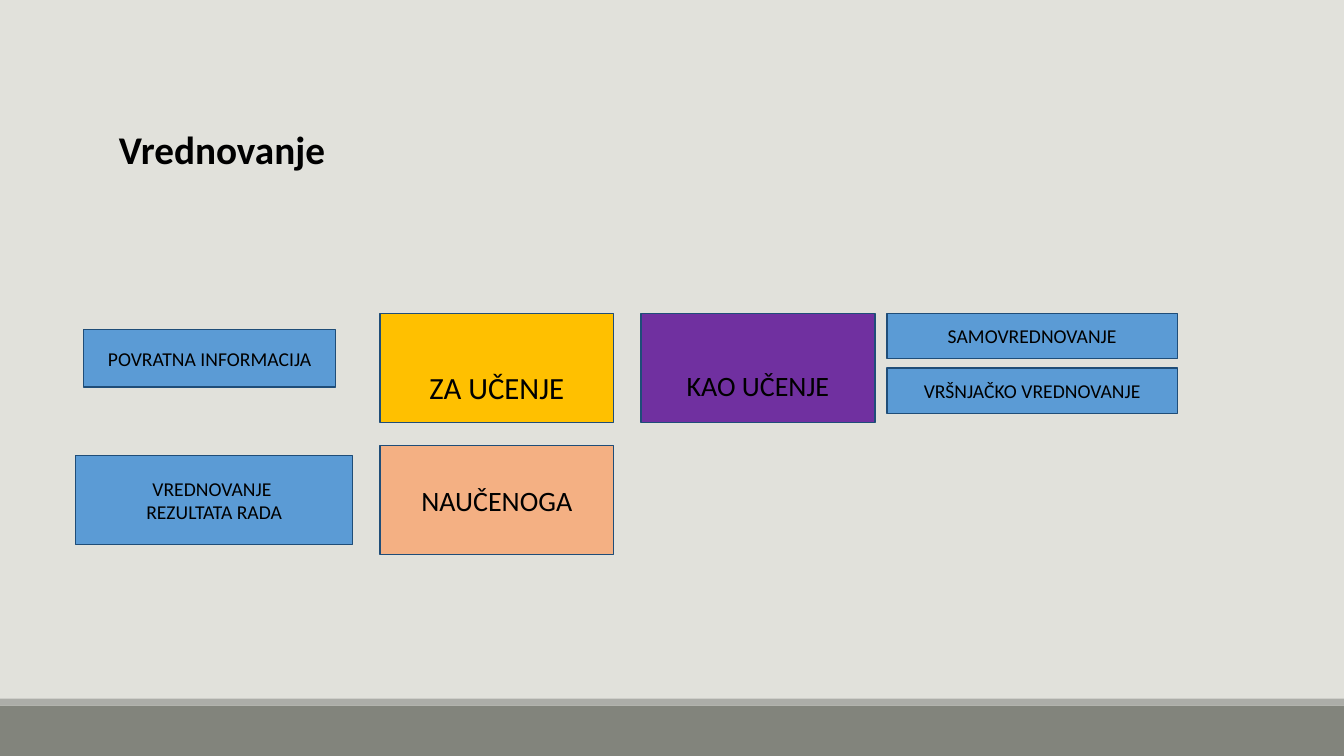
from dataclasses import dataclass

from pptx import Presentation
from pptx.dml.color import RGBColor
from pptx.enum.shapes import MSO_SHAPE as Preset
from pptx.enum.text import MSO_ANCHOR as Anchor, PP_ALIGN as Align
from pptx.slide import Slide
from pptx.text.text import TextFrame
from pptx.util import Pt


@dataclass(frozen=True)
class Theme:
    font: str = "Calibri"
    background: str = "E1E1DB"
    footer: str = "82847C"
    footer_edge: str = "ACADA8"
    outline: str = "1F4D78"
    text: str = "000000"
    blue: str = "5B9BD5"
    gold: str = "FFC000"
    purple: str = "7030A0"
    peach: str = "F4B083"
    title_size: float = 28
    large_size: float = 22
    medium_size: float = 20
    small_size: float = 14


THEME = Theme()
SLIDE_WIDTH, SLIDE_HEIGHT = 960, 540
TYPE_WIDTH, TYPE_HEIGHT = 167, 77.8
PEER_WIDTH, PEER_HEIGHT = 207.4, 32.4
FIRST_COLUMN, SECOND_COLUMN, PEER_COLUMN = 271.4, 457.9, 633.6
FIRST_ROW, SECOND_ROW = 223.9, 318.2
PEER_STEP = 38.9


@dataclass(frozen=True)
class Box:
    left: float
    top: float
    width: float
    height: float
    fill: str
    lines: tuple[str, ...] = ()
    size: float = THEME.small_size
    margin_top: float = 3.6
    outlined: bool = True


FOOTER_BANDS = (
    Box(0, 504, SLIDE_WIDTH, 36, THEME.footer, outlined=False),
    Box(0, 499, SLIDE_WIDTH, 5, THEME.footer_edge, outlined=False),
)
ASSESSMENT_TYPES = (
    Box(FIRST_COLUMN, FIRST_ROW, TYPE_WIDTH, TYPE_HEIGHT, THEME.gold,
        ("ZA UČENJE",), THEME.large_size, 30.5),
    Box(SECOND_COLUMN, FIRST_ROW, TYPE_WIDTH, TYPE_HEIGHT, THEME.purple,
        ("KAO UČENJE",), THEME.medium_size, 28),
    Box(FIRST_COLUMN, SECOND_ROW, TYPE_WIDTH, TYPE_HEIGHT, THEME.peach,
        ("NAUČENOGA",), THEME.medium_size),
)
METHODS = (
    Box(59.8, 235.4, 180, 41, THEME.blue, ("POVRATNA INFORMACIJA",)),
    *(
        Box(PEER_COLUMN, FIRST_ROW + row * PEER_STEP, PEER_WIDTH, PEER_HEIGHT,
            THEME.blue, (label,))
        for row, label in enumerate(("SAMOVREDNOVANJE", "VRŠNJAČKO VREDNOVANJE"))
    ),
    Box(54, 325.4, 198, 63.4, THEME.blue, ("VREDNOVANJE ", "REZULTATA RADA")),
)


def color(value: str) -> RGBColor:
    return RGBColor.from_string(value)


def write_lines(frame: TextFrame, lines: tuple[str, ...], size: float,
                alignment: Align, bold: bool = False) -> None:
    """Write one paragraph for each line, all in the same format."""
    font_format = {"name": THEME.font, "size": Pt(size), "bold": bold}
    for index, line in enumerate(lines):
        paragraph = frame.add_paragraph() if index else frame.paragraphs[0]
        paragraph.alignment = alignment
        run = paragraph.add_run()
        run.text = line
        for name, value in font_format.items():
            setattr(run.font, name, value)
        run.font.color.rgb = color(THEME.text)


def draw_box(slide: Slide, box: Box) -> None:
    shape = slide.shapes.add_shape(
        Preset.RECTANGLE, Pt(box.left), Pt(box.top), Pt(box.width), Pt(box.height))
    shape.shadow.inherit = False
    shape.fill.solid()
    shape.fill.fore_color.rgb = color(box.fill)
    if box.outlined:
        shape.line.color.rgb = color(THEME.outline)
        shape.line.width = Pt(1)
    else:
        shape.line.fill.background()
    frame_format = {
        "word_wrap": True,
        "vertical_anchor": Anchor.MIDDLE,
        "margin_top": Pt(box.margin_top),
    }
    for name, value in frame_format.items():
        setattr(shape.text_frame, name, value)
    write_lines(shape.text_frame, box.lines, box.size, Align.CENTER)


def draw_title(slide: Slide, title: str) -> None:
    shape = slide.shapes.add_textbox(Pt(77.8), Pt(85.7), Pt(223.2), Pt(41))
    shape.text_frame.word_wrap = True
    write_lines(shape.text_frame, (title,), THEME.title_size, Align.LEFT, bold=True)


def main() -> None:
    presentation = Presentation()
    presentation.slide_width = Pt(SLIDE_WIDTH)
    presentation.slide_height = Pt(SLIDE_HEIGHT)
    slide = presentation.slides.add_slide(presentation.slide_layouts[6])
    slide.background.fill.solid()
    slide.background.fill.fore_color.rgb = color(THEME.background)
    for box in FOOTER_BANDS + ASSESSMENT_TYPES + METHODS:
        draw_box(slide, box)
    draw_title(slide, "Vrednovanje")
    presentation.save("out.pptx")


if __name__ == "__main__":
    main()
